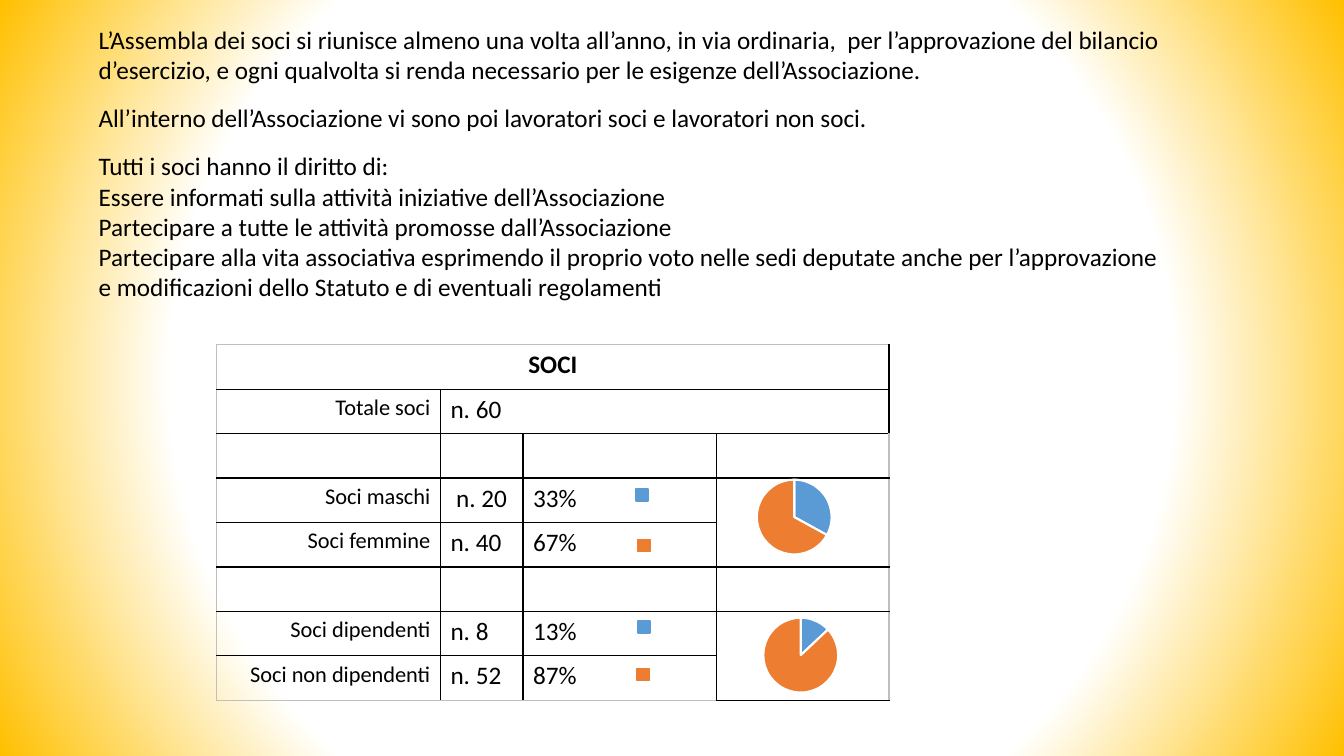
"""Build the slide on the members' assembly, their rights and their numbers."""
from lxml import etree
from pptx import Presentation
from pptx.chart.data import CategoryChartData
from pptx.dml.color import RGBColor
from pptx.enum.chart import XL_CHART_TYPE
from pptx.enum.shapes import MSO_SHAPE
from pptx.enum.text import MSO_AUTO_SIZE, PP_ALIGN
from pptx.oxml import parse_xml
from pptx.util import Pt

PIE, RECTANGLE = XL_CHART_TYPE.PIE, MSO_SHAPE.RECTANGLE
LEFT, CENTER, RIGHT = PP_ALIGN.LEFT, PP_ALIGN.CENTER, PP_ALIGN.RIGHT
GROW = MSO_AUTO_SIZE.SHAPE_TO_FIT_TEXT
FONT, BLACK, GREY, WHITE = "Calibri", "000000", "BFBFBF", "FFFFFF"
BLUE, ORANGE = "5B9BD5", "ED7D31"
DRAWING = "http://schemas.openxmlformats.org/drawingml/2006/main"
MAIN = "http://schemas.openxmlformats.org/presentationml/2006/main"
CHART = "http://schemas.openxmlformats.org/drawingml/2006/chart"

PARAGRAPHS = [
    ("L’Assembla dei soci si riunisce almeno una volta all’anno, in via ordinaria,  per "
     "l’approvazione del bilancio d’esercizio, e ogni qualvolta si renda necessario per le "
     "esigenze dell’Associazione.", 0),
    ("All’interno dell’Associazione vi sono poi lavoratori soci e lavoratori non soci.", 12.8),
    ("Tutti i soci hanno il diritto di:", 12.8),
    ("Essere informati sulla attività iniziative dell’Associazione", 0),
    ("Partecipare a tutte le attività promosse dall’Associazione", 0),
    ("Partecipare alla vita associativa esprimendo il proprio voto nelle sedi deputate anche "
     "per l’approvazione e modificazioni dello Statuto e di eventuali regolamenti", 0),
]
ROWS = [
    ["SOCI", "", "", ""],
    ["Totale soci", "n. 60", "", ""],
    ["", "", "", ""],
    ["Soci maschi", " n. 20", "33%", ""],
    ["Soci femmine", "n. 40", "67%", ""],
    ["", "", "", ""],
    ["Soci dipendenti", "n. 8", "13%", ""],
    ["Soci non dipendenti", "n. 52", "87%", ""],
]
MERGES = [((0, 0), (0, 3)), ((1, 1), (1, 3)), ((3, 3), (4, 3)), ((6, 3), (7, 3))]
COLUMN_WIDTHS = [159.84, 59.04, 138.24, 123.12]
ROW_HEIGHT = 31.77
TABLE_LEFT, TABLE_TOP = 154.8, 246.24
PIES = [
    ((33, 67), (515.52, 332.64, 103.68, 73.44)),
    ((13, 87), (515.52, 430.56, 113.04, 74.88)),
]
PIE_DIAMETER = 53.5
MARKER_SIZE = 8.6
MARKERS = [
    (455.76, 385.2, ORANGE), (454.32, 349.2, BLUE),
    (455.04, 477.36, ORANGE), (455.76, 443.52, BLUE),
]


def color(value):
    return RGBColor.from_string(value)


def write(paragraph, text, size=18, bold=False, align=LEFT, before=0):
    paragraph.alignment = align
    paragraph.space_before = Pt(before)
    run = paragraph.add_run()
    run.text = text
    run.font.name, run.font.size, run.font.bold = FONT, Pt(size), bold
    run.font.color.rgb = color(BLACK)


def set_background(slide):
    slide.element.cSld.insert(0, parse_xml(
        f'<p:bg xmlns:p="{MAIN}" xmlns:a="{DRAWING}"><p:bgPr><a:gradFill><a:gsLst>'
        f'<a:gs pos="0"><a:srgbClr val="{WHITE}"/></a:gs>'
        f'<a:gs pos="65000"><a:srgbClr val="{WHITE}"/></a:gs>'
        '<a:gs pos="100000"><a:srgbClr val="FFC000"><a:alpha val="68000"/></a:srgbClr></a:gs>'
        '</a:gsLst><a:path path="circle"><a:fillToRect l="50000" t="50000" r="50000" b="50000"/>'
        '</a:path></a:gradFill><a:effectLst/></p:bgPr></p:bg>'))


def set_borders(cell, outer_sides):
    properties = cell._tc.get_or_add_tcPr()
    for position, side in enumerate("LRTB"):
        line_color = GREY if side in outer_sides else BLACK
        properties.insert(position, parse_xml(
            f'<a:ln{side} xmlns:a="{DRAWING}" w="12700"><a:solidFill>'
            f'<a:srgbClr val="{line_color}"/></a:solidFill></a:ln{side}>'))


def add_members_table(slide):
    last_row, last_column = len(ROWS) - 1, len(COLUMN_WIDTHS) - 1
    frame = slide.shapes.add_table(
        len(ROWS), len(COLUMN_WIDTHS), Pt(TABLE_LEFT), Pt(TABLE_TOP),
        Pt(sum(COLUMN_WIDTHS)), Pt(ROW_HEIGHT * len(ROWS)))
    table = frame.table
    table.first_row = table.horz_banding = False
    for column, width in zip(table.columns, COLUMN_WIDTHS):
        column.width = Pt(width)
    for row_index, texts in enumerate(ROWS):
        table.rows[row_index].height = Pt(ROW_HEIGHT)
        for column_index, text in enumerate(texts):
            cell = table.cell(row_index, column_index)
            cell.fill.background()
            edges = {"L": column_index == 0, "R": column_index == last_column,
                     "T": row_index == 0, "B": row_index == last_row}
            set_borders(cell, [side for side, is_outer in edges.items() if is_outer])
            if not text:
                continue
            paragraph = cell.text_frame.paragraphs[0]
            if row_index == 0:
                write(paragraph, text, bold=True, align=CENTER)
            elif column_index == 0:
                write(paragraph, text, size=16, align=RIGHT)
            else:
                write(paragraph, text)
    for first, last in MERGES:
        table.cell(*first).merge(table.cell(*last))


def set_pie_layout(chart, width, height):
    plot_area = chart._chartSpace.chart.plotArea
    for old in plot_area.findall(f"{{{CHART}}}layout"):
        plot_area.remove(old)
    layout = etree.Element(f"{{{CHART}}}layout")
    manual = etree.SubElement(layout, f"{{{CHART}}}manualLayout")
    share_x, share_y = PIE_DIAMETER / width, PIE_DIAMETER / height
    settings = [("layoutTarget", "inner"), ("xMode", "edge"), ("yMode", "edge"),
                ("x", (1 - share_x) / 2), ("y", (1 - share_y) / 2),
                ("w", share_x), ("h", share_y)]
    for name, value in settings:
        text = value if isinstance(value, str) else f"{value:.3f}"
        etree.SubElement(manual, f"{{{CHART}}}{name}", val=text)
    plot_area.insert(0, layout)


def add_pie(slide, values, box):
    data = CategoryChartData()
    data.categories = ["1", "2"]
    data.add_series("Series 1", values)
    chart = slide.shapes.add_chart(PIE, *map(Pt, box), data).chart
    chart.has_legend = chart.has_title = False
    chart.font.name, chart.font.size = FONT, Pt(10)
    chart.font.color.rgb = color(BLACK)
    plot = chart.plots[0]
    plot.vary_by_categories = True
    for index, fill_color in enumerate((BLUE, ORANGE)):
        point_format = plot.series[0].points[index].format
        point_format.fill.solid()
        point_format.fill.fore_color.rgb = color(fill_color)
        point_format.line.color.rgb = color(WHITE)
        point_format.line.width = Pt(1.5)
    set_pie_layout(chart, *box[2:])


def add_marker(slide, left, top, fill_color):
    shape = slide.shapes.add_shape(
        RECTANGLE, Pt(left), Pt(top), Pt(MARKER_SIZE), Pt(MARKER_SIZE))
    shape.shadow.inherit = False
    shape.fill.solid()
    shape.fill.fore_color.rgb = color(fill_color)
    shape.line.color.rgb = color(fill_color)
    shape.line.width = Pt(1)


def add_body_text(slide):
    box = slide.shapes.add_textbox(Pt(63.36), Pt(13.68), Pt(777.6), Pt(207.36))
    frame = box.text_frame
    frame.word_wrap = True
    frame.auto_size = GROW
    for index, (text, before) in enumerate(PARAGRAPHS):
        paragraph = frame.add_paragraph() if index else frame.paragraphs[0]
        write(paragraph, text, before=before)


def main():
    presentation = Presentation()
    presentation.slide_width, presentation.slide_height = Pt(960), Pt(540)
    slide = presentation.slides.add_slide(presentation.slide_layouts[6])
    set_background(slide)
    add_members_table(slide)
    for values, box in PIES:
        add_pie(slide, values, box)
    for marker in MARKERS:
        add_marker(slide, *marker)
    add_body_text(slide)
    presentation.save("out.pptx")


if __name__ == "__main__":
    main()
